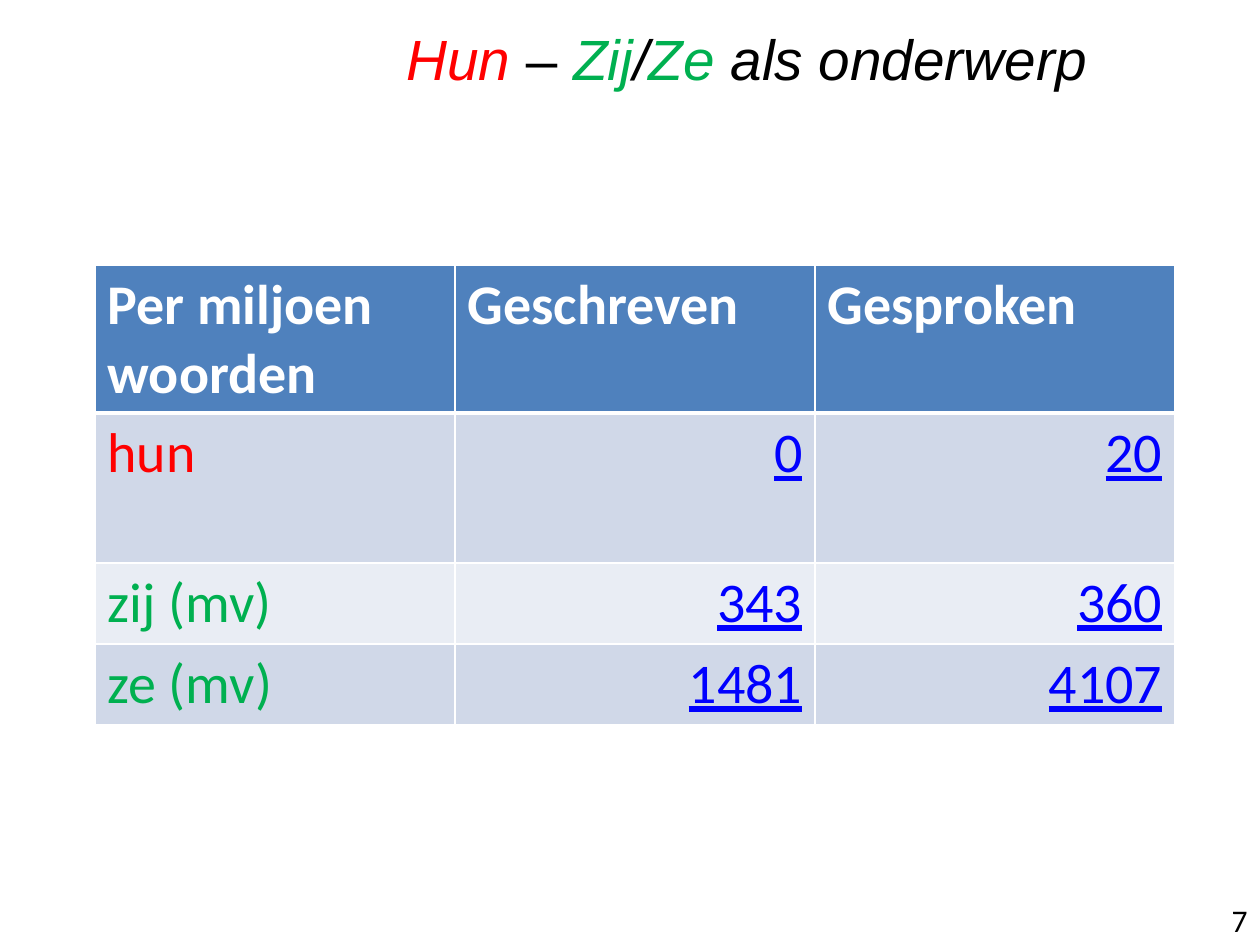
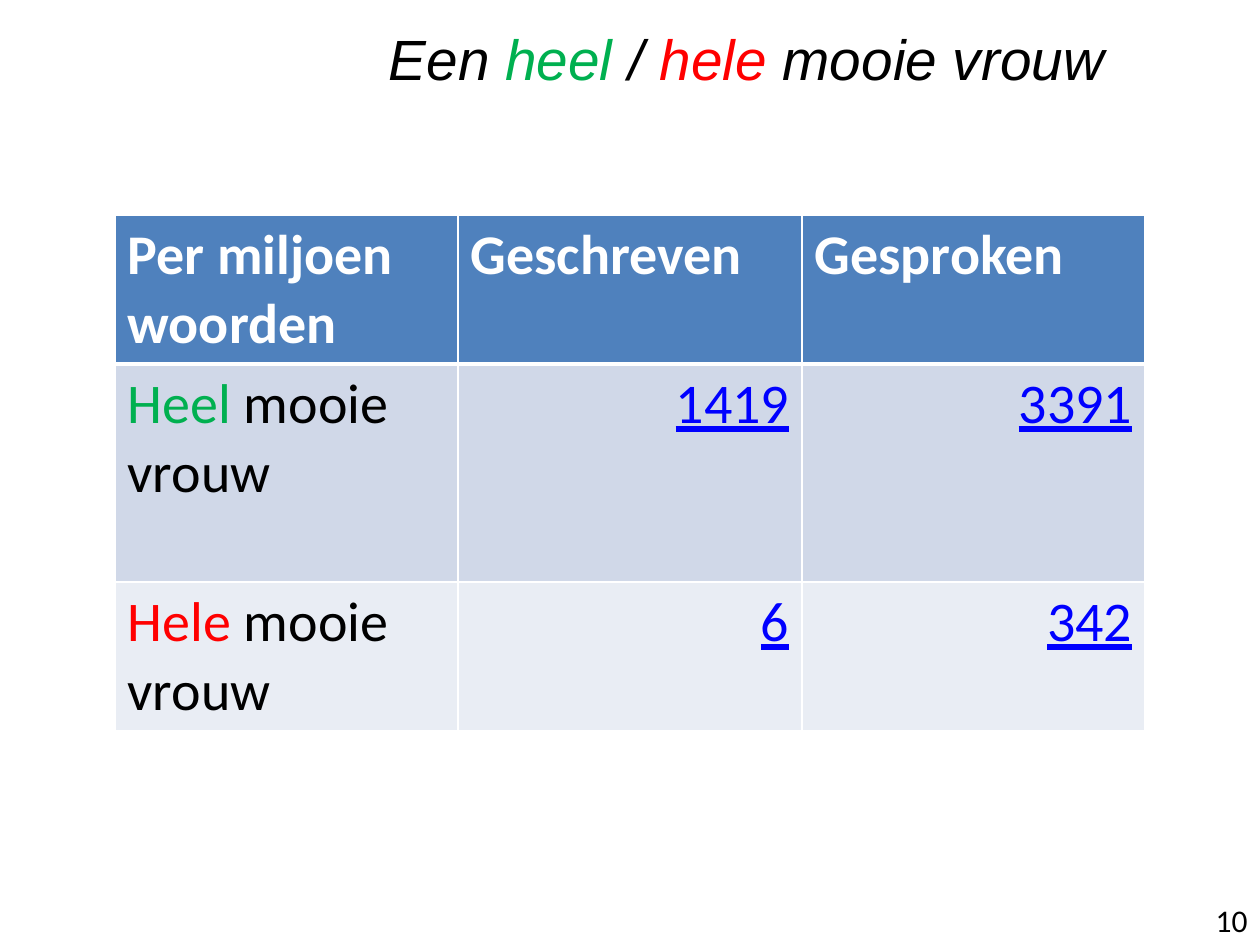
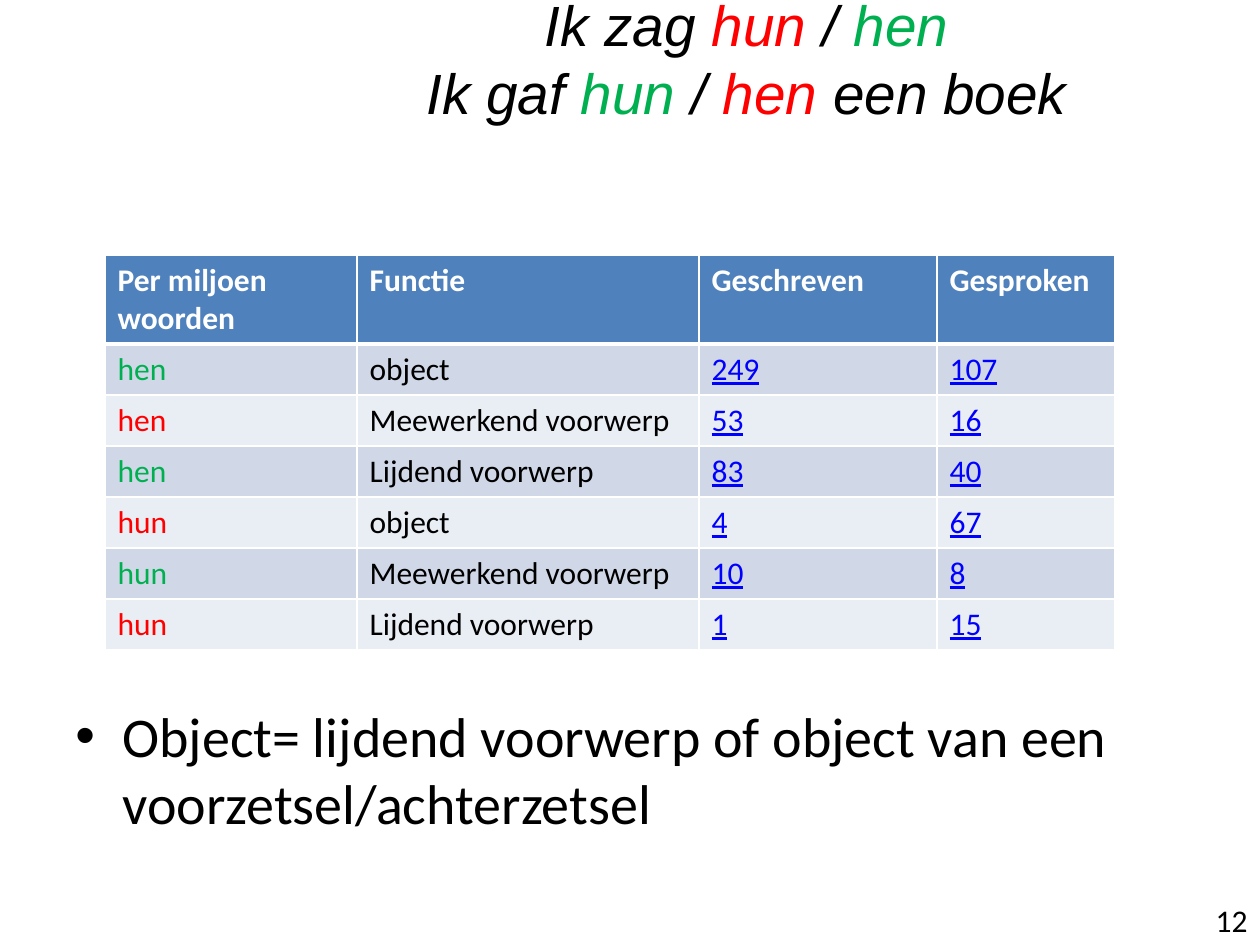
from lxml.etree import SubElement
from pptx import Presentation
from pptx.dml.color import RGBColor
from pptx.enum.text import MSO_ANCHOR, PP_ALIGN
from pptx.oxml.ns import qn
from pptx.util import Emu, Pt

SCALE = 914400 / 126
RED, GREEN, BLACK, WHITE = "FF0000", "00B050", "000000", "FFFFFF"
LINK, HEAD, BANDS = "0000FF", "4F81BD", ("D0D8E8", "E9EDF4")


def px(size):
    """Turn pixels into EMU."""
    return Emu(round(size * SCALE))


def hue(code):
    """Turn a hex string into a colour."""
    return RGBColor.from_string(code)


class Deck:
    """Holds the shared style and the current slide."""

    def __init__(self):
        """Start an empty deck of 1260 by 945 px."""
        self.show = Presentation()
        self.show.slide_width, self.show.slide_height = px(1260), px(945)
        self.slide = None

    def page(self, title, number):
        """Add a slide with its title and page number."""
        self.slide = self.show.slides.add_slide(self.show.slide_layouts[6])
        self.title(title)
        para = self.box(1126, 895, 134, 50)
        para.alignment = PP_ALIGN.RIGHT
        self.run(para, str(number), 18)

    def box(self, left, top, width, height, anchor=MSO_ANCHOR.TOP):
        """Add a wrapping text box and return its first paragraph."""
        shape = self.slide.shapes.add_textbox(*map(px, (left, top, width, height)))
        frame = shape.text_frame
        frame.word_wrap = True
        frame.vertical_anchor = anchor
        return frame.paragraphs[0]

    def run(self, para, text, size, color=BLACK, face="Calibri",
            bold=False, slant=False, under=False):
        """Add one styled run to a paragraph."""
        run = para.add_run()
        run.text = text
        font = run.font
        font.name, font.size = face, Pt(size)
        font.bold, font.italic, font.underline = bold, slant, under
        font.color.rgb = hue(color)

    def title(self, lines):
        """Add the centred title, one list of runs a line."""
        para = self.box(233, 0, 1027, 116, MSO_ANCHOR.MIDDLE)
        para.alignment = PP_ALIGN.CENTER
        for place, line in enumerate(lines):
            if place:
                para.add_line_break()
            for text, color, *slant in line:
                self.run(para, text, 32.4, color, "Arial", slant=slant != [False])

    def bullet(self, text, left, top, width, height):
        """Add a bulleted paragraph."""
        para = self.box(left, top, width, height)
        props = para._p.get_or_add_pPr()
        props.set("marL", str(px(47)))
        props.set("indent", str(px(-47)))
        SubElement(props, qn("a:buFont"), typeface="Arial")
        SubElement(props, qn("a:buChar"), char="•")
        self.run(para, text, 32)

    def edge(self, cell, row):
        """Draw white cell borders, thick below the header."""
        props = cell._tc.get_or_add_tcPr()
        for side in "LRTB":
            thick = (row, side) in ((0, "B"), (1, "T"))
            line = SubElement(props, qn("a:ln" + side), w=str(Pt(3 if thick else 1)))
            fill = SubElement(line, qn("a:solidFill"))
            SubElement(fill, qn("a:srgbClr"), val=WHITE)

    def table(self, left, top, wide, high, size, align, heads, rows):
        """Add a banded table whose whole numbers look like links."""
        frame = self.slide.shapes.add_table(
            len(high), len(wide), px(left), px(top), px(sum(wide)), px(sum(high)))
        grid = frame.table
        for col, width in zip(grid.columns, wide):
            col.width = px(width)
        for row, height in zip(grid.rows, high):
            row.height = px(height)
        for r, row in enumerate([heads, *rows]):
            for c, value in enumerate(row):
                cell = grid.cell(r, c)
                self.edge(cell, r)
                cell.fill.solid()
                cell.fill.fore_color.rgb = hue(BANDS[(r - 1) % 2] if r else HEAD)
                para = cell.text_frame.paragraphs[0]
                if isinstance(value, int):
                    para.alignment = align
                    self.run(para, str(value), size, LINK, under=True)
                elif isinstance(value, str):
                    self.run(para, value, size, BLACK if r else WHITE, bold=not r)
                else:
                    for text, color in value:
                        self.run(para, text, size, color)


def main():
    """Build the three slides."""
    deck = Deck()
    first, *modes = heads = ["Per miljoen woorden", "Geschreven", "Gesproken"]

    deck.page([[("Hun", RED), (" – ", BLACK, False), ("Zij", GREEN), ("/", BLACK),
                ("Ze", GREEN), (" als onderwerp", BLACK)]], 7)
    deck.table(95, 265, [360] * 3, [148, 150, 81, 81], 32, PP_ALIGN.RIGHT, heads, [
        ([("hun", RED)], 0, 20),
        ([("zij (mv)", GREEN)], 343, 360),
        ([("ze (mv)", GREEN)], 1481, 4107),
    ])

    deck.page([[("Een ", BLACK), ("heel", GREEN), (" / ", BLACK), ("hele", RED),
                (" mooie vrouw", BLACK)]], 10)
    noun = (" mooie vrouw", BLACK)
    deck.table(115, 215, [343, 344, 343], [149, 218, 149], 32, PP_ALIGN.RIGHT, heads, [
        ([("Heel", GREEN), noun], 1419, 3391),
        ([("Hele", RED), noun], 6, 342),
    ])

    deck.page([[("Ik zag ", BLACK), ("hun", RED), (" / ", BLACK), ("hen", GREEN)],
               [("Ik gaf ", BLACK), ("hun", GREEN), (" / ", BLACK), ("hen", RED),
                (" een boek", BLACK)]], 12)
    deck.bullet("Object= lijdend voorwerp of object van een voorzetsel/achterzetsel",
                63, 695, 1134, 174)
    deck.table(105, 255, [252, 342, 238, 178], [89] + [51] * 6, 18, PP_ALIGN.LEFT,
               [first, "Functie", *modes], [
        ([("hen", GREEN)], "object", 249, 107),
        ([("hen", RED)], "Meewerkend voorwerp", 53, 16),
        ([("hen", GREEN)], "Lijdend voorwerp", 83, 40),
        ([("hun", RED)], "object", 4, 67),
        ([("hun", GREEN)], "Meewerkend voorwerp", 10, 8),
        ([("hun", RED)], "Lijdend voorwerp", 1, 15),
    ])
    deck.show.save("out.pptx")


if __name__ == "__main__":
    main()
